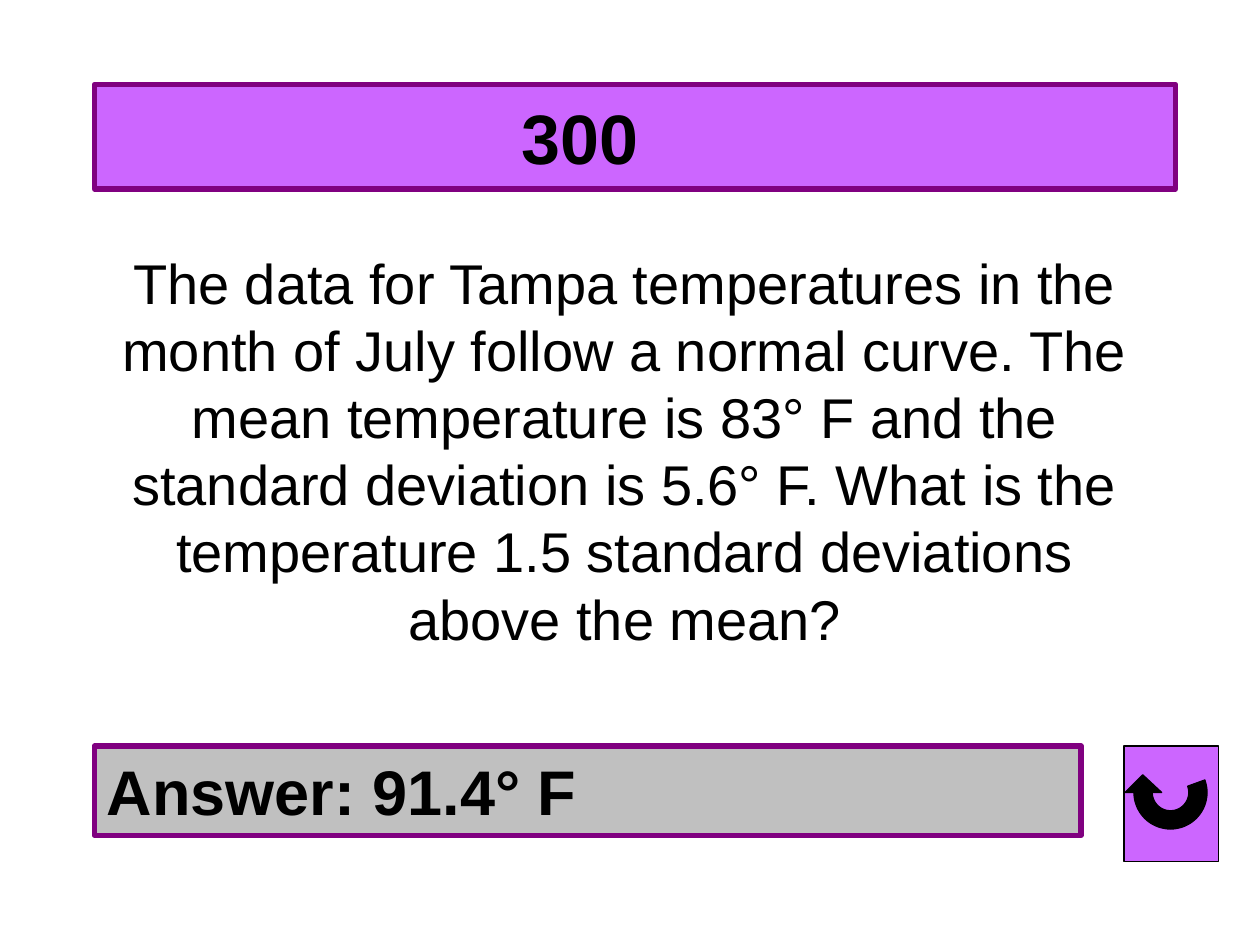
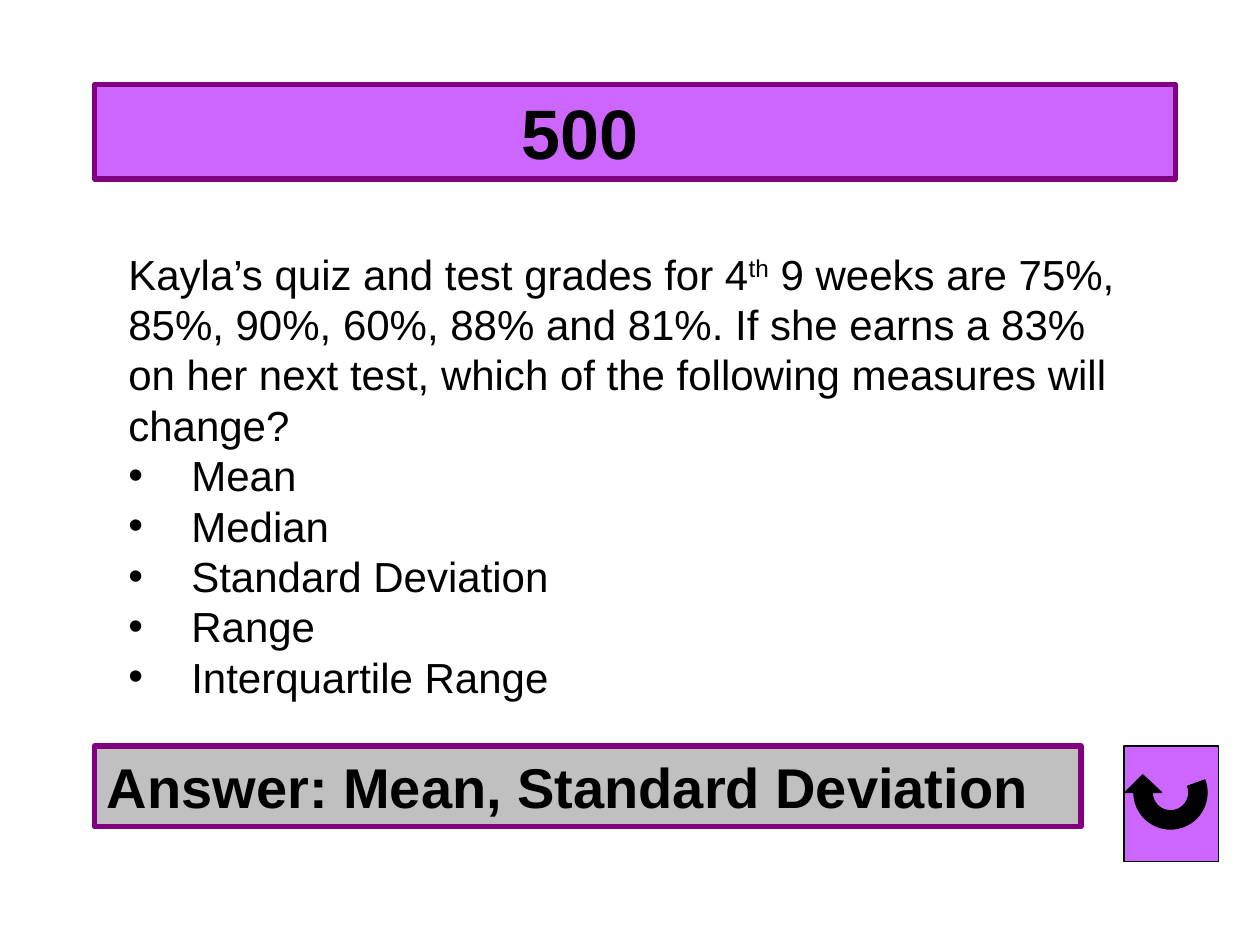
from math import cos, radians, sin

from pptx import Presentation
from pptx.dml.color import RGBColor
from pptx.enum.shapes import MSO_SHAPE as SHAPE
from pptx.enum.text import MSO_ANCHOR as ANCHOR, MSO_AUTO_SIZE as AUTO, PP_ALIGN as ALIGN
from pptx.oxml.ns import qn
from pptx.util import Inches, Pt

BLACK = RGBColor(0x00, 0x00, 0x00)
VIOLET = RGBColor(0xCC, 0x66, 0xFF)
PURPLE = RGBColor(0x80, 0x00, 0x80)
SILVER = RGBColor(0xC0, 0xC0, 0xC0)

LEFT = 0.75
FOOT_TOP = 5.92
TITLE_FORMAT = {"size": Pt(40), "bold": True}
QUESTION = ("The data for Tampa temperatures in the month of July follow a normal curve. "
            "The mean temperature is 83° F and the standard deviation is 5.6° F. "
            "What is the temperature 1.5 standard deviations above the mean?")
QUIZ = [("Kayla’s quiz and test grades for 4", False), ("th", True),
        (" 9 weeks are 75%, 85%, 90%, 60%, 88% and 81%. If she earns a 83% on her "
         "next test, which of the following measures will change?", False)]
MEASURES = ["Mean", "Median", "Standard Deviation", "Range", "Interquartile Range"]


def style(font, **formats):
    font.color.rgb = BLACK
    for name, value in {"name": "Arial", **formats}.items():
        setattr(font, name, value)


def paint(sp, fill, line, width):
    sp.fill.solid()
    sp.fill.fore_color.rgb = fill
    sp.line.color.rgb = line
    sp.line.width = Pt(width)
    sp.shadow.inherit = False


def add_title(s, text, height):
    sp = s.shapes.title
    sp.left, sp.top, sp.width, sp.height = map(Inches, (LEFT, 0.67, 8.58, height))
    paint(sp, VIOLET, PURPLE, 3)
    tf = sp.text_frame
    tf.auto_size = AUTO.NONE
    tf.vertical_anchor = ANCHOR.MIDDLE
    tf.margin_right = Inches(0.98)  # sets the score left of centre
    p = tf.paragraphs[0]
    p.alignment = ALIGN.CENTER
    r = p.add_run()
    r.text = text
    style(r.font, **TITLE_FORMAT)


def add_answer(s, text, height, size):
    sp = s.shapes.add_shape(SHAPE.RECTANGLE, Inches(LEFT), Inches(FOOT_TOP),
                            Inches(7.83), Inches(height))
    paint(sp, SILVER, PURPLE, 3)
    tf = sp.text_frame
    tf.vertical_anchor = ANCHOR.TOP
    p = tf.paragraphs[0]
    p.alignment = ALIGN.LEFT
    r = p.add_run()
    r.text = text
    style(r.font, size=Pt(size), bold=True)


def arc(radius, start, end, step=5):
    """Points around the centre of the return arrow, angles clockwise from the right."""
    direction = step if end > start else -step
    return [(9.29 + radius * cos(radians(a)), 6.29 + radius * sin(radians(a)))
            for a in range(start, end + direction, direction)]


def add_return_button(s):
    group = s.shapes.add_group_shape()
    sp = group.shapes.add_shape(SHAPE.RECTANGLE, Inches(8.92), Inches(FOOT_TOP),
                                Inches(0.75), Inches(0.92))
    paint(sp, VIOLET, BLACK, 0.75)
    head = [(8.93, 6.29), (9.07, 6.15), (9.22, 6.29)]
    points = arc(0.145, 180, -20) + arc(0.29, -20, 180) + head
    points = [(Inches(x), Inches(y)) for x, y in points]
    builder = group.shapes.build_freeform(*points[0])
    builder.add_line_segments(points[1:], close=True)
    paint(builder.convert_to_shape(), BLACK, BLACK, 0.75)


def add_text(s, left, width, height):
    box = s.shapes.add_textbox(Inches(left), Inches(1.92), Inches(width), Inches(height))
    tf = box.text_frame
    tf.word_wrap = True
    return tf


def add_run(p, text, size, raised=False):
    r = p.add_run()
    r.text = text
    style(r.font, size=Pt(size))
    if raised:
        r._r.get_or_add_rPr().set("baseline", "30000")


def add_bullet(tf, text, size):
    p = tf.add_paragraph()
    pPr = p._p.get_or_add_pPr()
    pPr.set("marL", str(Inches(0.5)))
    pPr.set("indent", str(Inches(-0.5)))
    for tag, key, value in (("a:buFont", "typeface", "Arial"), ("a:buChar", "char", "•")):
        pPr.append(pPr.makeelement(qn(tag), {key: value}))
    add_run(p, text, size)


def add_card(prs, score, title_height, answer, answer_height, answer_size):
    s = prs.slides.add_slide(prs.slide_layouts[5])
    add_title(s, score, title_height)
    add_answer(s, answer, answer_height, answer_size)
    add_return_button(s)
    return s


def main():
    prs = Presentation()
    prs.slide_width, prs.slide_height = Inches(10), Inches(7.5)

    # Normal curve question
    s = add_card(prs, "300", 0.83, "Answer: 91.4° F", 0.71, 36)
    p = add_text(s, LEFT, 8.42, 3.33).paragraphs[0]
    p.alignment = ALIGN.CENTER
    add_run(p, QUESTION, 32)

    # Question on measures that change
    s = add_card(prs, "500", 0.75, "Answer: Mean, Standard Deviation", 0.64, 32)
    tf = add_text(s, 0.92, 8.25, 3.74)
    for text, raised in QUIZ:
        add_run(tf.paragraphs[0], text, 24, raised)
    for measure in MEASURES:
        add_bullet(tf, measure, 24)

    prs.save("out.pptx")


if __name__ == "__main__":
    main()
